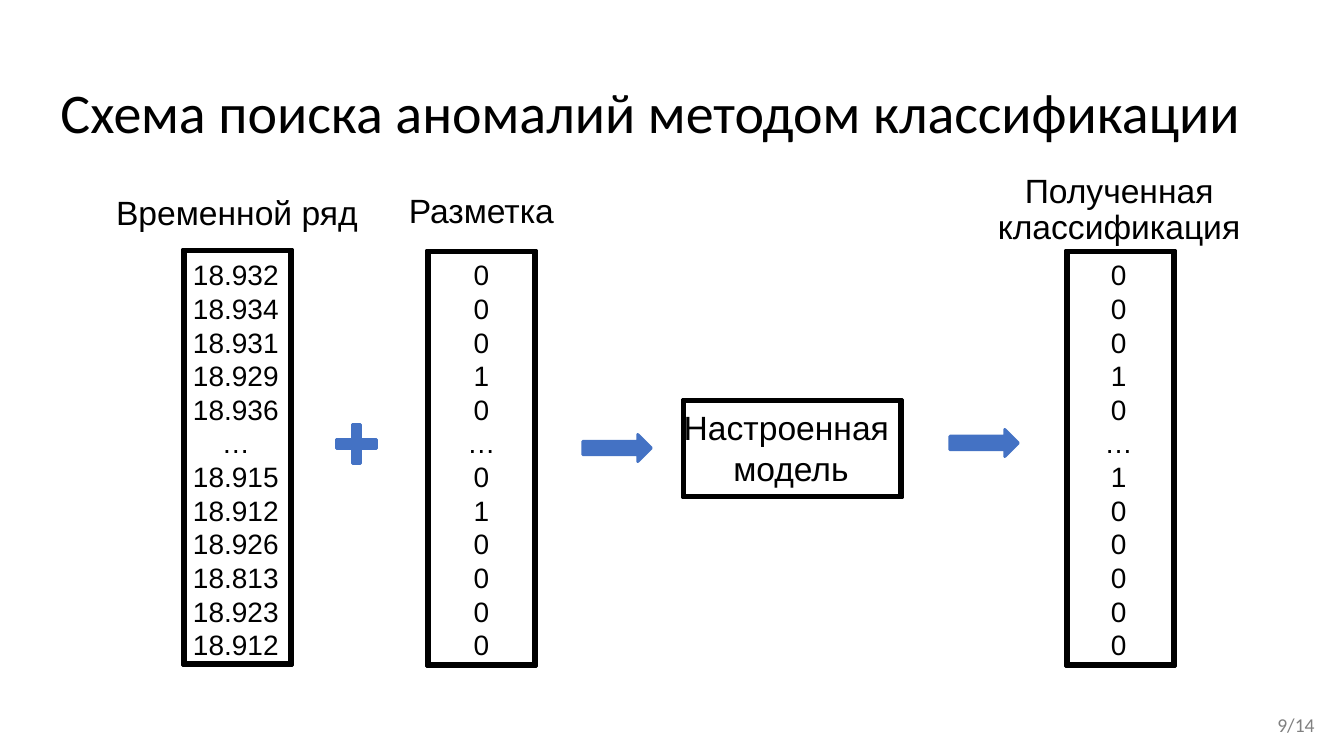
from pptx import Presentation
from pptx.dml.color import RGBColor
from pptx.enum.shapes import MSO_SHAPE
from pptx.enum.text import MSO_ANCHOR, MSO_AUTO_SIZE, PP_ALIGN
from pptx.util import Inches, Pt

BLACK = RGBColor(0x00, 0x00, 0x00)
BLUE = RGBColor(0x44, 0x72, 0xC4)
GRAY = RGBColor(0x80, 0x80, 0x80)

FRAME, ARROW, PLUS = MSO_SHAPE.FRAME, MSO_SHAPE.RIGHT_ARROW, MSO_SHAPE.CROSS
LEFT, CENTER = PP_ALIGN.LEFT, PP_ALIGN.CENTER
MIDDLE = MSO_ANCHOR.MIDDLE
NO_FIT, GROW = MSO_AUTO_SIZE.NONE, MSO_AUTO_SIZE.SHAPE_TO_FIT_TEXT


class SchemeSlide:
    """Style and drawing methods for one slide."""

    title_font = "Calibri"
    body_font = "Arial"

    def __init__(self, prs):
        self.slide = prs.slides.add_slide(prs.slide_layouts[5])

    def style(self, p, size, font, color=BLACK, align=CENTER):
        p.alignment = align
        p.font.size = Pt(size)
        p.font.name = font
        p.font.color.rgb = color

    def title(self, text, x, y, w, h):
        sp = self.slide.shapes.title
        sp.left, sp.top, sp.width, sp.height = map(Inches, (x, y, w, h))
        tf = sp.text_frame
        tf.text = text
        tf.auto_size = NO_FIT
        tf.vertical_anchor = MIDDLE
        p = tf.paragraphs[0]
        self.style(p, 40, self.title_font, align=LEFT)
        p.line_spacing = 0.9

    def text(self, lines, x, y, w, h, size, font=body_font, color=BLACK,
             align=CENTER, fit=GROW):
        sp = self.slide.shapes.add_textbox(*map(Inches, (x, y, w, h)))
        tf = sp.text_frame
        tf.word_wrap = True
        tf.auto_size = fit
        tf.text = "\n".join(lines)
        for p in tf.paragraphs:
            self.style(p, size, font, color, align)
        return tf

    def heading(self, text, x, y, w, h):
        p = self.text([text], x, y, w, h, 24, fit=NO_FIT).paragraphs[0]
        p.line_spacing = 0.9
        p.space_before = Pt(10)

    def shape(self, kind, x, y, w, h, color, adjustment=None):
        sp = self.slide.shapes.add_shape(kind, *map(Inches, (x, y, w, h)))
        sp.shadow.inherit = False
        sp.fill.solid()
        sp.fill.fore_color.rgb = color
        sp.line.color.rgb = color
        sp.line.width = Pt(2)
        if adjustment is not None:
            sp.adjustments[0] = adjustment

    def frame(self, x, y, w, h):
        self.shape(FRAME, x, y, w, h, BLACK, 0.025)

    def column(self, values, frame_x, frame_y, text_x, text_w):
        self.frame(frame_x, frame_y, 1.09, 4.13)
        self.text(values, text_x, 2.51, text_w, 4.14, 20)

    def arrow(self, x, y):
        self.shape(ARROW, x, y, 0.68, 0.27, BLUE)


def main():
    prs = Presentation()
    prs.slide_width, prs.slide_height = Inches(13.33), Inches(7.5)
    s = SchemeSlide(prs)
    s.title("Схема поиска аномалий методом классификации", 0.5, 0.45, 12.33, 1.39)

    # Time series
    series = ["18.932", "18.934", "18.931", "18.929", "18.936", "…",
              "18.915", "18.912", "18.926", "18.813", "18.923", "18.912"]
    s.heading("Временной ряд", 1.05, 1.9, 2.6, 0.48)
    s.column(series, 1.81, 2.47, 1.81, 1.06)

    # Labels added to the series
    s.shape(PLUS, 3.34, 4.21, 0.39, 0.39, BLUE, 0.391)
    s.heading("Разметка", 3.66, 1.88, 2.23, 0.48)
    s.column("00010…010000", 4.23, 2.48, 4.35, 0.85)

    # Trained model
    s.arrow(5.78, 4.31)
    s.frame(6.77, 3.96, 2.18, 0.98)
    s.text(["Настроенная ", "модель"], 6.68, 3.99, 2.33, 0.91, 24)

    # Resulting classification
    s.arrow(9.42, 4.26)
    s.heading("Полученная классификация", 9.63, 1.68, 2.94, 0.65)
    s.column("00010…100000", 10.57, 2.48, 10.67, 0.85)

    # Page number
    s.text(["9/14"], 12.57, 7.02, 0.74, 0.34, 14, s.title_font, GRAY, LEFT)

    prs.save("out.pptx")


if __name__ == "__main__":
    main()
